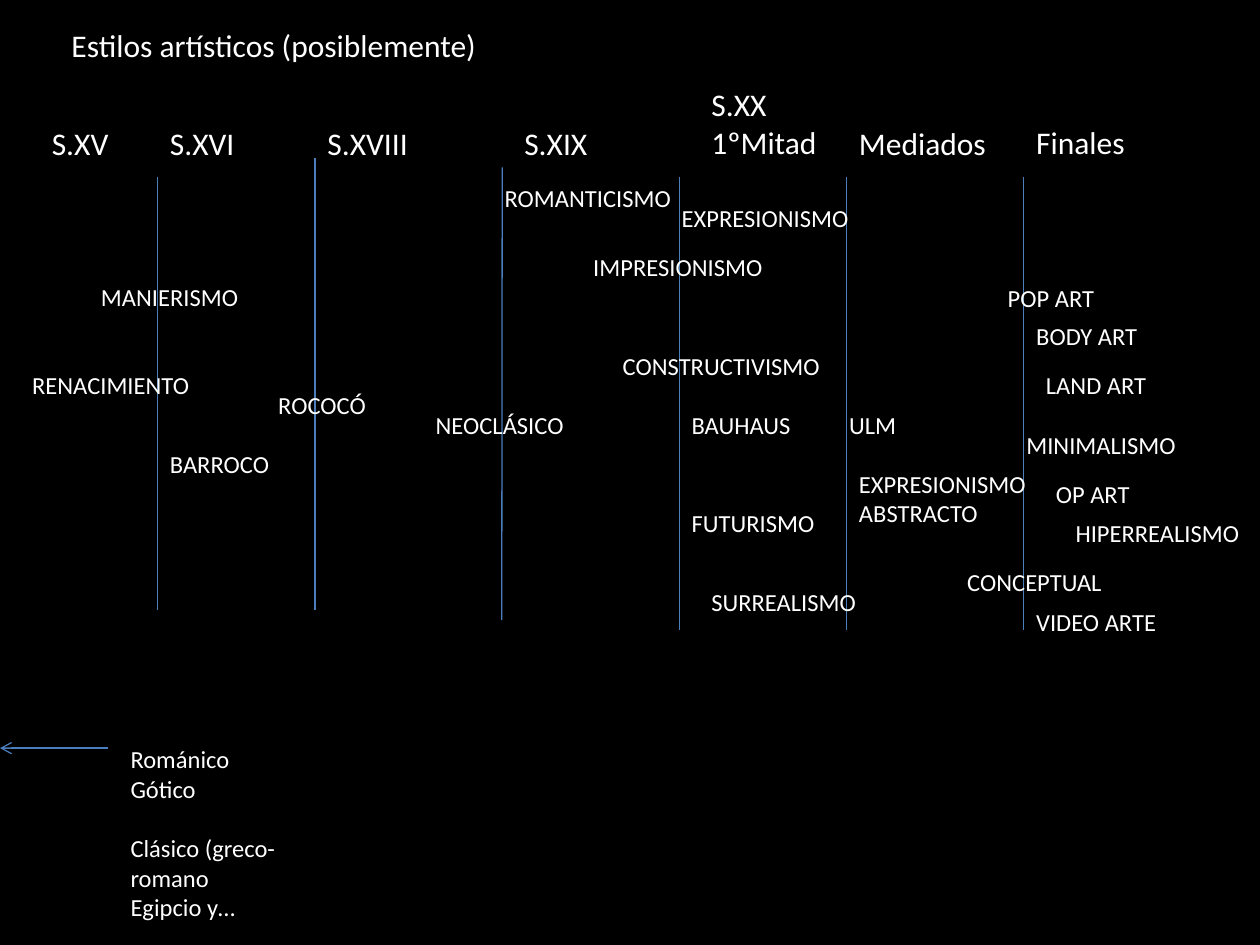
from lxml import etree
from pptx import Presentation
from pptx import util as u
from pptx.dml import color
from pptx.enum import shapes, text
from pptx.oxml import ns

BLACK = color.RGBColor(0x00, 0x00, 0x00)
WHITE = color.RGBColor(0xFF, 0xFF, 0xFF)
BLUE = color.RGBColor(0x4B, 0x7E, 0xBC)

HEADING_SIZE = 18
STYLE_SIZE = 14
LINE_HEIGHT = 1.2
INSETS = 7.2
FRAME_FORMAT = {"word_wrap": True, "auto_size": text.MSO_AUTO_SIZE.SHAPE_TO_FIT_TEXT}


def add_label(lines, left, top, width, size, rows=1):
    height = rows * size * LINE_HEIGHT + INSETS
    box = slide.shapes.add_textbox(u.Pt(left), u.Pt(top), u.Pt(width), u.Pt(height))
    frame = box.text_frame
    frame.text = lines
    for name, value in FRAME_FORMAT.items():
        setattr(frame, name, value)
    font_format = {"name": "Calibri", "size": u.Pt(size)}
    for paragraph in frame.paragraphs:
        for run in paragraph.runs:
            for name, value in font_format.items():
                setattr(run.font, name, value)
            run.font.color.rgb = WHITE
    return frame


def add_line(*ends):
    line = slide.shapes.add_connector(
        shapes.MSO_CONNECTOR.STRAIGHT, *[u.Pt(end) for end in ends]
    )
    line.line.color.rgb = BLUE
    line.line.width = u.Pt(0.75)
    etree.SubElement(line._element.spPr, ns.qn("a:effectLst"))
    return line


presentation = Presentation()
presentation.slide_width = u.Pt(720)
presentation.slide_height = u.Pt(540)
slide = presentation.slides.add_slide(presentation.slide_layouts[6])
slide.background.fill.solid()
slide.background.fill.fore_color.rgb = BLACK

title = add_label("Estilos artísticos (posiblemente)", 33.75, 11.4, 248.5, HEADING_SIZE)
title.word_wrap = False

century_lines = [
    (90, 101.25, 90, 348.75),
    (180, 90, 180, 348.75),
    (287, 95.6, 286.75, 354.4),
    (388.1, 101.25, 388.1, 360),
    (483.75, 101.25, 483.75, 360),
    (585, 101.25, 585, 360),
]
for ends in century_lines:
    add_line(*ends)

periods = [
    ("S.XV", 22.5, 67.5, 67.5, 1),
    ("S.XVI", 90, 67.5, 67.5, 1),
    ("S.XVIII", 180, 67.5, 67.5, 1),
    ("S.XIX", 292.5, 67.5, 67.5, 1),
    ("S.XX\n1ºMitad", 399.4, 45, 84.4, 2),
    ("Mediados", 483.75, 67.5, 95.6, 1),
    ("Finales", 585, 66.5, 67.5, 1),
]
for name, left, top, width, rows in periods:
    add_label(name, left, top, width, HEADING_SIZE, rows)

styles = [
    ("RENACIMIENTO", 11.25, 208.1, 112.5),
    ("MANIERISMO", 50.6, 157.5, 101.25),
    ("BARROCO", 90, 253.1, 90),
    ("ROCOCÓ", 151.9, 219.4, 90),
    ("NEOCLÁSICO", 241.9, 230.6, 118.1),
    ("ROMANTICISMO", 281.25, 101.25, 112.5),
    ("IMPRESIONISMO", 331.9, 140.6, 112.5),
    ("EXPRESIONISMO", 382.5, 112.5, 118.1),
    ("CONSTRUCTIVISMO", 348.75, 196.9, 129.4),
    ("BAUHAUS", 388.1, 230.6, 90),
    ("FUTURISMO", 388.1, 286.9, 112.5),
    ("SURREALISMO", 399.4, 331.9, 101.25),
    ("ULM", 478.1, 230.6, 106.9),
    ("POP ART", 568.75, 158.1, 84.4),
    ("BODY ART", 585, 180, 84.4),
    ("LAND ART", 590.6, 208.1, 84.4),
    ("MINIMALISMO", 579.4, 241.9, 106.9),
    ("OP ART", 596.25, 270, 84.4),
    ("HIPERREALISMO", 607.5, 292.5, 112.5),
    ("CONCEPTUAL", 545.6, 320.6, 112.5),
    ("VIDEO ARTE", 585, 343.1, 84.4),
]
for name, left, top, width in styles:
    add_label(name, left, top, width, STYLE_SIZE)
add_label("EXPRESIONISMO ABSTRACTO", 483.75, 264.4, 112.5, STYLE_SIZE, 2)

arrow = add_line(61.9, 427.5, 0, 427.5)
etree.SubElement(arrow.line._get_or_add_ln(), ns.qn("a:tailEnd"), type="arrow")

earlier = add_label(
    "Románico\nGótico\nClásico (greco-romano\nEgipcio y…", 67.5, 421.9, 129.4, STYLE_SIZE, 6
)
earlier.paragraphs[2].space_before = u.Pt(17)

presentation.save("out.pptx")
